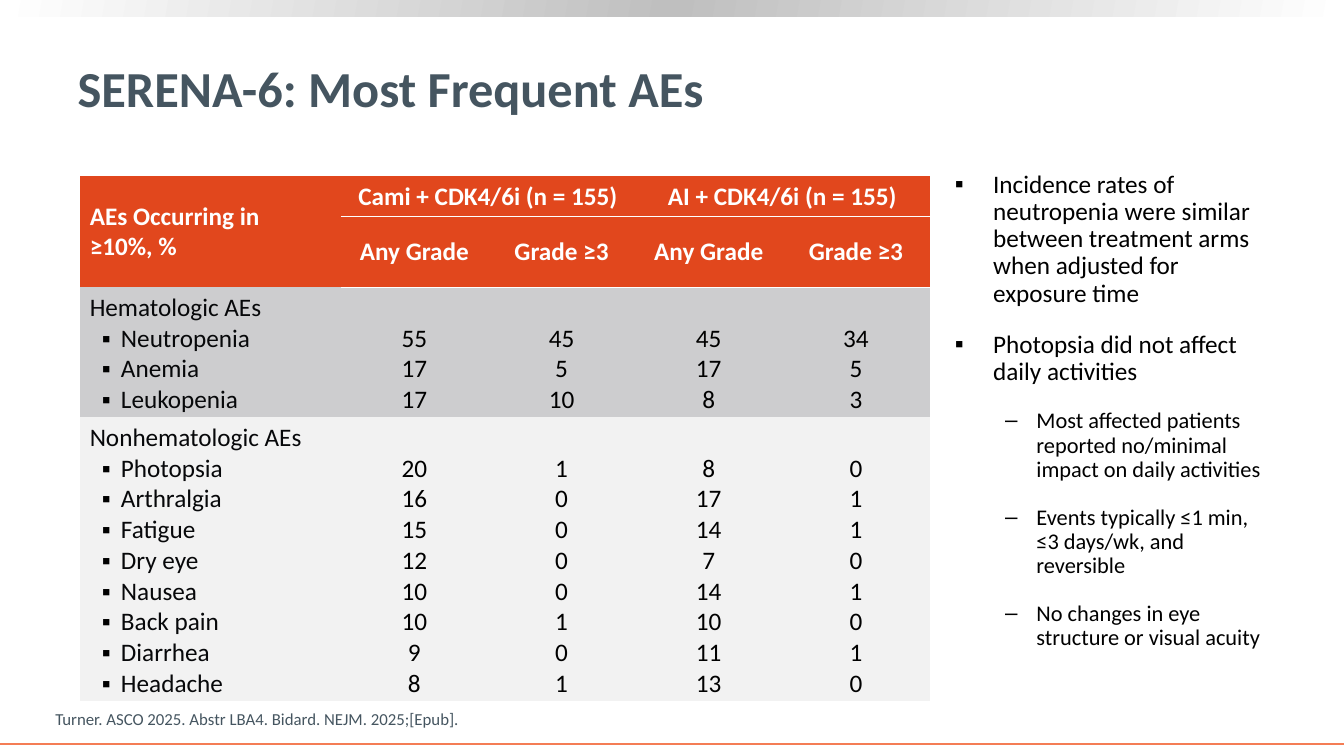
from dataclasses import dataclass

from lxml import etree
from pptx import Presentation
from pptx.dml.color import RGBColor
from pptx.enum.shapes import MSO_CONNECTOR, MSO_SHAPE
from pptx.enum.text import MSO_ANCHOR, MSO_AUTO_SIZE, PP_ALIGN
from pptx.oxml import parse_xml
from pptx.oxml.ns import nsdecls, qn
from pptx.util import Inches, Pt

LEFT, CENTER = PP_ALIGN.LEFT, PP_ALIGN.CENTER
TOP, MIDDLE, BOTTOM = MSO_ANCHOR.TOP, MSO_ANCHOR.MIDDLE, MSO_ANCHOR.BOTTOM
NO_AUTOFIT = MSO_AUTO_SIZE.NONE
RECTANGLE, STRAIGHT = MSO_SHAPE.RECTANGLE, MSO_CONNECTOR.STRAIGHT
PLAIN_TABLE = "{2D5ABB26-0587-4C30-8999-92F81FD0307C}"


@dataclass(frozen=True)
class Theme:
    """Colours, font and type sizes of the slide."""
    font: str = "Calibri"
    slate: str = "455560"
    orange: str = "E1471D"
    rule: str = "F47D55"
    white: str = "FFFFFF"
    black: str = "000000"
    ink: str = "07080A"
    silver: str = "BFBFBF"
    gray: str = "CDCDCF"
    pale: str = "F2F2F2"
    title: int = 36
    text: int = 18
    subtext: int = 16
    citation: int = 12


THEME = Theme()
SLIDE_WIDTH, SLIDE_HEIGHT = 13.33, 7.5
LINE_HEIGHT = 0.305

ARMS = ["Cami + CDK4/6i (n = 155)", "AI + CDK4/6i (n = 155)"]
GRADES = ["Any Grade", "Grade ≥3"]
EVENT_GROUPS = [
    ("Hematologic AEs", THEME.gray, [
        ("Neutropenia", 55, 45, 45, 34),
        ("Anemia", 17, 5, 17, 5),
        ("Leukopenia", 17, 10, 8, 3),
    ]),
    ("Nonhematologic AEs", THEME.pale, [
        ("Photopsia", 20, 1, 8, 0),
        ("Arthralgia", 16, 0, 17, 1),
        ("Fatigue", 15, 0, 14, 1),
        ("Dry eye", 12, 0, 7, 0),
        ("Nausea", 10, 0, 14, 1),
        ("Back pain", 10, 1, 10, 0),
        ("Diarrhea", 9, 0, 11, 1),
        ("Headache", 8, 1, 13, 0),
    ]),
]
FINDINGS = [
    (0, "Incidence rates of neutropenia were similar between treatment arms "
        "when adjusted for exposure time"),
    (0, "Photopsia did not affect daily activities"),
    (1, "Most affected patients reported no/minimal impact on daily activities"),
    (1, "Events typically ≤1 min, ≤3 days/wk, and reversible"),
    (1, "No changes in eye structure or visual acuity"),
]


def apply_format(target, values):
    """Set every attribute in values on target."""
    for name, value in values.items():
        setattr(target, name, value)


def place(shape, box):
    """Move a shape to a box given in inches."""
    apply_format(shape, dict(zip(("left", "top", "width", "height"), map(Inches, box))))


def add_bullet(paragraph, mark, margin, hanging):
    """Give a paragraph a black bullet and a hanging indent."""
    properties = paragraph._p.get_or_add_pPr()
    properties.set("marL", str(Inches(margin)))
    properties.set("indent", str(-Inches(hanging)))
    for element in (
        f'<a:buClr {nsdecls("a")}><a:srgbClr val="{THEME.black}"/></a:buClr>',
        f'<a:buFont {nsdecls("a")} typeface="Arial"/>',
        f'<a:buChar {nsdecls("a")} char="{mark}"/>',
    ):
        properties.append(parse_xml(element))


def write(paragraph, text, size, color, bold=False, align=LEFT):
    """Fill a paragraph with formatted text."""
    paragraph.text = text
    paragraph.alignment = align
    for run in paragraph.runs:
        apply_format(run.font, {"name": THEME.font, "size": Pt(size), "bold": bold})
        run.font.color.rgb = RGBColor.from_string(color)


def next_paragraph(frame, index):
    """Return the first paragraph of a frame, or a new one after it."""
    return frame.add_paragraph() if index else frame.paragraphs[0]


def add_top_band(slide, box):
    """Draw the silver gradient band."""
    band = slide.shapes.add_shape(RECTANGLE, *map(Inches, box))
    band.shadow.inherit = False
    band.line.fill.background()
    band.fill.gradient()
    gradient = band._element.spPr.find(qn("a:gradFill"))
    stops = "".join(
        f'<a:gs pos="{position * 1000}"><a:srgbClr val="{color}"/></a:gs>'
        for position, color in ((0, THEME.white), (50, THEME.silver), (100, THEME.white)))
    gradient.getparent().replace(gradient, parse_xml(
        f'<a:gradFill {nsdecls("a")} rotWithShape="1"><a:gsLst>{stops}</a:gsLst>'
        f'<a:lin ang="{190 * 60000}" scaled="0"/></a:gradFill>'))


def add_bottom_rule(slide, box):
    """Draw the orange rule along the top edge of its box."""
    left, top, width, _ = box
    rule = slide.shapes.add_connector(
        STRAIGHT, *map(Inches, (left, top, left + width, top)))
    rule.line.color.rgb = RGBColor.from_string(THEME.rule)
    rule.line.width = Pt(1.5)
    etree.SubElement(rule._element.spPr, qn("a:effectLst"))


def add_title(slide, box):
    """Place and format the slide title."""
    title = slide.shapes.title
    place(title, box)
    frame = title.text_frame
    apply_format(frame, {"vertical_anchor": MIDDLE, "auto_size": NO_AUTOFIT})
    write(frame.paragraphs[0], "SERENA-6: Most Frequent AEs", THEME.title, THEME.slate, True)


def add_citation(slide, box):
    """Place the literature citation."""
    frame = slide.shapes.add_textbox(*map(Inches, box)).text_frame
    apply_format(frame, {"word_wrap": True, "vertical_anchor": BOTTOM})
    write(frame.paragraphs[0], "Turner. ASCO 2025. Abstr LBA4. Bidard. NEJM. 2025;[Epub].",
          THEME.citation, THEME.slate)


def add_findings(slide, box):
    """Fill the body placeholder with the two-level list of findings."""
    body = slide.placeholders[1]
    place(body, box)
    frame = body.text_frame
    apply_format(frame, {"auto_size": NO_AUTOFIT, "vertical_anchor": TOP})
    styles = [(THEME.text, "▪", 0.38, 0.38), (THEME.subtext, "‒", 0.81, 0.31)]
    for index, (level, finding) in enumerate(FINDINGS):
        size, *bullet = styles[level]
        paragraph = next_paragraph(frame, index)
        add_bullet(paragraph, *bullet)
        apply_format(paragraph, {"level": level, "line_spacing": 0.9,
                                 "space_before": Pt(10 if index else 0), "space_after": Pt(7)})
        write(paragraph, finding, size, THEME.black)


def format_cell(cell, fill, anchor, top, bottom):
    """Set the fill, anchor and vertical margins of a cell."""
    cell.fill.solid()
    cell.fill.fore_color.rgb = RGBColor.from_string(fill)
    apply_format(cell, {"vertical_anchor": anchor, "margin_top": Inches(top),
                        "margin_bottom": Inches(bottom)})


def add_cell_border(cell, side):
    """Draw a thin white border on one side of a cell."""
    cell._tc.get_or_add_tcPr().insert(0, parse_xml(
        f'<a:{side} {nsdecls("a")} w="{Pt(1)}"><a:solidFill>'
        f'<a:srgbClr val="{THEME.white}"/></a:solidFill></a:{side}>'))


def fill_header(table):
    """Write the two header rows with their merged cells."""
    for row, side in enumerate(("lnB", "lnT")):
        for column in range(5):
            cell = table.cell(row, column)
            format_cell(cell, THEME.orange, MIDDLE, 0.04, 0.04)
            if column:
                add_cell_border(cell, side)
    headings = [(0, 0, "AEs Occurring in \v≥10%, %", LEFT)]
    headings += [(0, 1 + 2 * arm, name, CENTER) for arm, name in enumerate(ARMS)]
    headings += [(1, 1 + column, name, CENTER) for column, name in enumerate(GRADES * 2)]
    for row, column, name, align in headings:
        write(table.cell(row, column).text_frame.paragraphs[0], name,
              THEME.text, THEME.white, True, align)
    table.cell(0, 0).merge(table.cell(1, 0))
    for column in (1, 3):
        table.cell(0, column).merge(table.cell(0, column + 1))


def fill_event_group(table, row, group, fill, events):
    """Write one group of events and its rates in a single table row."""
    names, *rates = zip(*events)
    for column in range(5):
        format_cell(table.cell(row, column), fill, BOTTOM if column else TOP, 0.05, 0.02)
    label = table.cell(row, 0).text_frame
    write(label.paragraphs[0], group, THEME.text, THEME.ink)
    for name in names:
        paragraph = label.add_paragraph()
        add_bullet(paragraph, "▪", 0.31, 0.19)
        write(paragraph, name, THEME.text, THEME.ink)
    for column, values in enumerate(rates, 1):
        frame = table.cell(row, column).text_frame
        for index, value in enumerate(values):
            write(next_paragraph(frame, index), str(value), THEME.text, THEME.black, align=CENTER)


def add_events_table(slide, box):
    """Build the adverse event table."""
    heights = [0.4, 0.7]
    heights += [LINE_HEIGHT * (len(events) + 1) + 0.07 for _, _, events in EVENT_GROUPS]
    graphic = slide.shapes.add_table(len(heights), 5, *map(Inches, box))
    table = graphic.table
    apply_format(table, {"first_row": False, "horz_banding": False})
    table._tbl.tblPr.find(qn("a:tableStyleId")).text = PLAIN_TABLE
    label_width = 2.59
    rate_width = (box[2] - label_width) / 4
    for column, width in zip(table.columns, [label_width] + [rate_width] * 4):
        column.width = Inches(width)
    for row, height in zip(table.rows, heights):
        row.height = Inches(height)
    fill_header(table)
    for row, event_group in enumerate(EVENT_GROUPS, 2):
        fill_event_group(table, row, *event_group)


def main():
    """Build and save the slide."""
    deck = Presentation()
    apply_format(deck, {"slide_width": Inches(SLIDE_WIDTH), "slide_height": Inches(SLIDE_HEIGHT)})
    slide = deck.slides.add_slide(deck.slide_layouts[1])
    add_top_band(slide, (0, 0, SLIDE_WIDTH, 0.16))
    add_bottom_rule(slide, (0, 7.38, SLIDE_WIDTH, 0))
    add_title(slide, (0.67, 0.26, 11.89, 1.21))
    add_citation(slide, (0.45, 6.98, 8.76, 0.3))
    add_events_table(slide, (0.79, 1.75, 8.43, 5.2))
    add_findings(slide, (9.37, 1.65, 3.32, 5.09))
    deck.save("out.pptx")


if __name__ == "__main__":
    main()
